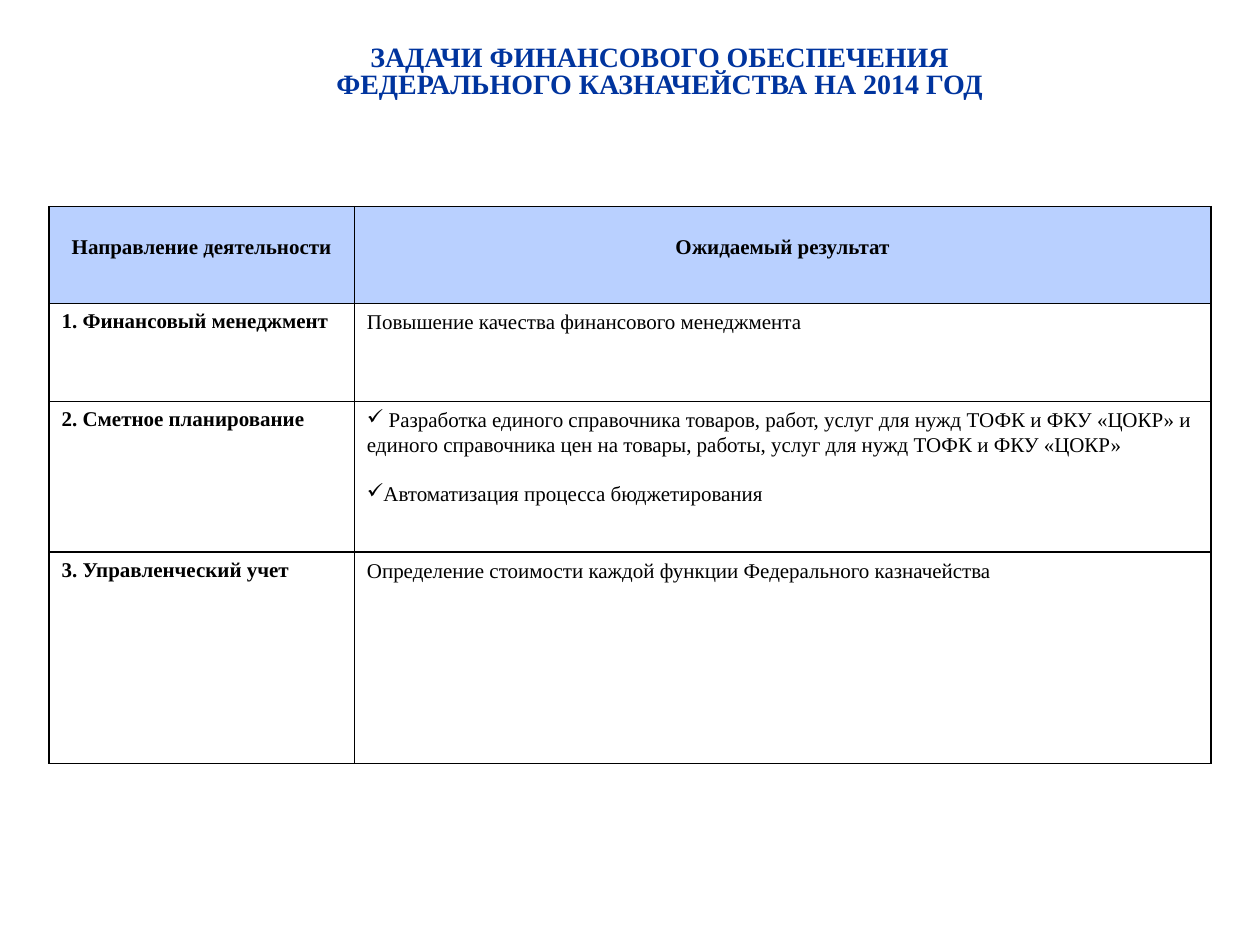
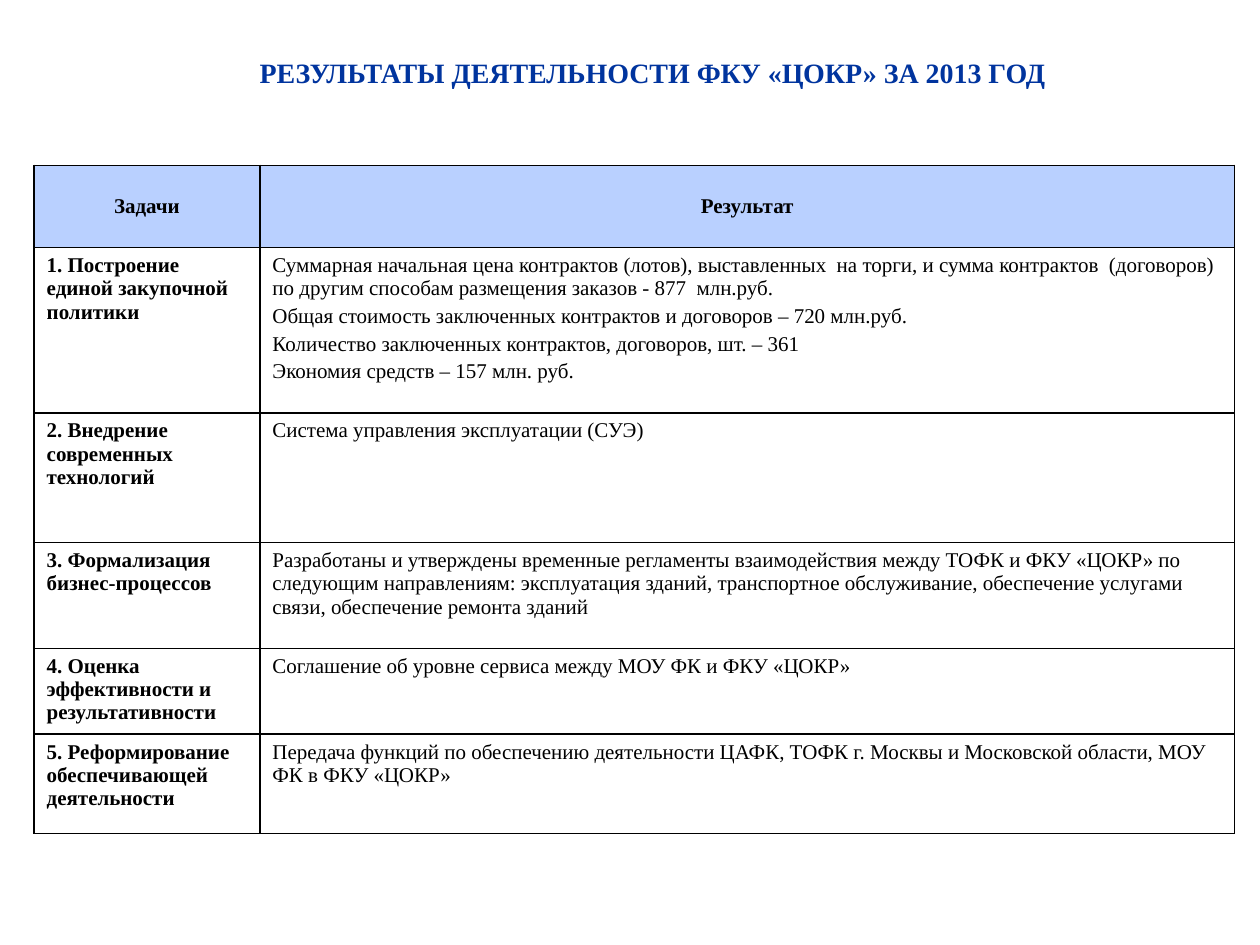
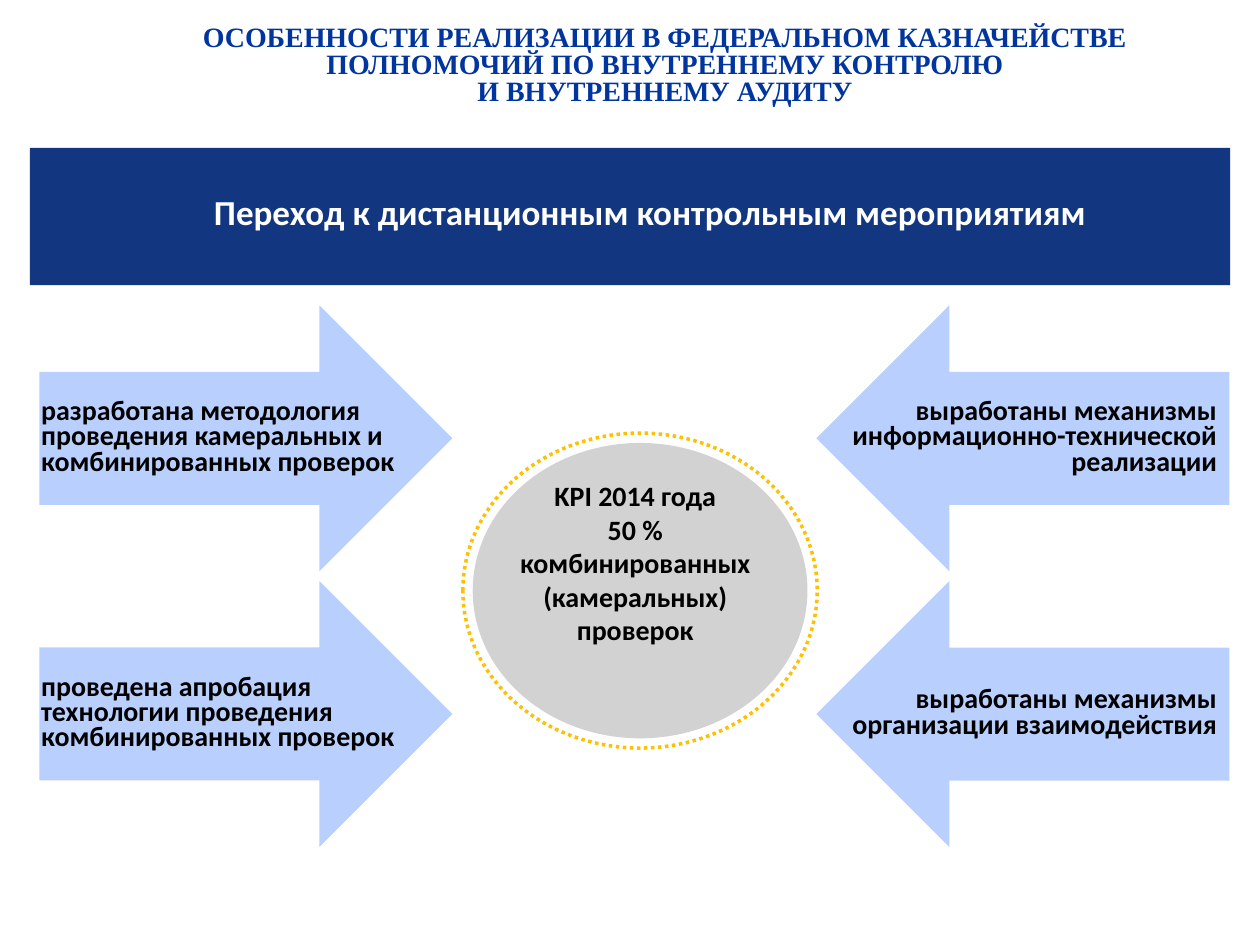
from dataclasses import dataclass

from lxml import etree
from pptx import Presentation
from pptx.dml.color import RGBColor
from pptx.enum.dml import MSO_LINE
from pptx.enum.shapes import MSO_SHAPE
from pptx.enum.text import MSO_ANCHOR, MSO_AUTO_SIZE, PP_ALIGN
from pptx.oxml.ns import qn
from pptx.util import Pt

LEFT, MID, RIGHT = PP_ALIGN.LEFT, PP_ALIGN.CENTER, PP_ALIGN.RIGHT
TOP, CENTRE = MSO_ANCHOR.TOP, MSO_ANCHOR.MIDDLE
FIXED = MSO_AUTO_SIZE.NONE
RECT, OVAL, ARROW = MSO_SHAPE.RECTANGLE, MSO_SHAPE.OVAL, MSO_SHAPE.RIGHT_ARROW
DOTS = MSO_LINE.ROUND_DOT


@dataclass(frozen=True)
class Theme:
    """Colours, fonts and type sizes of the deck."""
    title: str = "00349E"
    navy: str = "002776"
    pale: str = "B9D0FF"
    grey: str = "D2D2D2"
    gold: str = "FFC000"
    black: str = "000000"
    white: str = "FFFFFF"
    serif: str = "Times New Roman"
    sans: str = "Calibri"
    cell: int = 12
    text: int = 16
    large: int = 20


THEME = Theme()

TASKS = [
    ("Направление деятельности", "Ожидаемый результат"),
    ("1. Финансовый менеджмент", "Повышение качества финансового менеджмента"),
    ("2. Сметное планирование",
     "✓ Разработка единого справочника товаров, работ, услуг для нужд ТОФК и ФКУ «ЦОКР» "
     "и единого справочника цен на товары, работы, услуг для нужд ТОФК и ФКУ «ЦОКР»\n"
     "✓Автоматизация процесса бюджетирования"),
    ("3. Управленческий учет",
     "Определение стоимости каждой функции Федерального казначейства"),
]

RESULTS = [
    ("Задачи", "Результат"),
    ("1. Построение единой закупочной политики",
     "Суммарная начальная цена контрактов (лотов), выставленных  на торги, и сумма "
     "контрактов  (договоров) по другим способам размещения заказов - 877  млн.руб.\n"
     "Общая стоимость заключенных контрактов и договоров – 720 млн.руб.\n"
     "Количество заключенных контрактов, договоров, шт. – 361\n"
     "Экономия средств – 157 млн. руб."),
    ("2. Внедрение современных технологий", "Система управления эксплуатации (СУЭ)"),
    ("3. Формализация бизнес-процессов",
     "Разработаны и утверждены временные регламенты взаимодействия между ТОФК и ФКУ «ЦОКР» "
     "по следующим направлениям: эксплуатация зданий, транспортное обслуживание, "
     "обеспечение услугами связи, обеспечение ремонта зданий"),
    ("4. Оценка эффективности и результативности",
     "Соглашение об уровне сервиса между МОУ ФК и ФКУ «ЦОКР»"),
    ("5. Реформирование обеспечивающей деятельности",
     "Передача функций по обеспечению деятельности ЦАФК, ТОФК г. Москвы и Московской "
     "области, МОУ ФК в ФКУ «ЦОКР»"),
]


def place(box):
    """Turn a box in points into lengths."""
    return [Pt(n) for n in box]


def tick(par):
    """Give a paragraph a check mark as its bullet."""
    props = par._p.get_or_add_pPr()
    props.set("marL", "0")
    props.set("indent", "0")
    etree.SubElement(props, qn("a:buChar")).set("char", "✓")


def write(frame, text, font, size, color, bold=True, align=LEFT, line=None, gap=0):
    """Fill a text frame and format each paragraph."""
    frame.word_wrap = True
    frame.text = text.replace("✓", "")
    for n, (par, raw) in enumerate(zip(frame.paragraphs, text.split("\n"))):
        par.alignment = align
        if line:
            par.line_spacing = line
        if n and gap:
            par.space_before = Pt(gap)
        if raw.startswith("✓"):
            tick(par)
        for run in par.runs:
            run.font.name = font
            run.font.size = Pt(size)
            run.font.bold = bold
            run.font.color.rgb = RGBColor.from_string(color)


def start(deck, box, text, anchor=TOP, line=0.8):
    """Add a slide with its title."""
    slide = deck.slides.add_slide(deck.slide_layouts[5])
    title = slide.shapes.title
    title.left, title.top, title.width, title.height = place(box)
    frame = title.text_frame
    frame.auto_size = FIXED
    frame.vertical_anchor = anchor
    write(frame, text, THEME.serif, THEME.text, THEME.title, align=MID, line=line)
    return slide


def frame_cell(cell):
    """Draw thin black borders around a cell."""
    props = cell._tc.get_or_add_tcPr()
    for side in ("a:lnL", "a:lnR", "a:lnT", "a:lnB"):
        edge = etree.SubElement(props, qn(side), w=str(Pt(1)))
        fill = etree.SubElement(edge, qn("a:solidFill"))
        etree.SubElement(fill, qn("a:srgbClr"), val=THEME.black)


def grid(slide, spot, cols, highs, rows, line=None, gap=0):
    """Add a table with a pale header and bold first column."""
    box = (*spot, sum(cols), sum(highs))
    table = slide.shapes.add_table(len(rows), len(cols), *place(box)).table
    table.first_row = table.horz_banding = False
    for col, wide in zip(table.columns, cols):
        col.width = Pt(wide)
    for r, (row, high) in enumerate(zip(rows, highs)):
        table.rows[r].height = Pt(high)
        for c, text in enumerate(row):
            cell = table.cell(r, c)
            head = r == 0
            frame_cell(cell)
            cell.fill.solid()
            cell.fill.fore_color.rgb = RGBColor.from_string(THEME.pale if head else THEME.white)
            cell.margin_top = Pt(17 if head else 3.6)
            write(cell.text_frame, text, THEME.serif, THEME.cell, THEME.black,
                  bold=head or c == 0, align=MID if head else LEFT,
                  line=line if c and not head else None, gap=gap)


def shape(slide, kind, box, color=None):
    """Add a flat shape without outline."""
    item = slide.shapes.add_shape(kind, *place(box))
    item.shadow.inherit = False
    item.line.fill.background()
    if color:
        item.fill.solid()
        item.fill.fore_color.rgb = RGBColor.from_string(color)
    else:
        item.fill.background()
    return item


def label(slide, box, text, size=THEME.text, color=THEME.black, align=MID, line=None, anchor=TOP):
    """Add a bold sans text box."""
    frame = slide.shapes.add_textbox(*place(box)).text_frame
    frame.vertical_anchor = anchor
    write(frame, text, THEME.sans, size, color, align=align, line=line)


def banner(slide, box, text):
    """Add the slightly clear navy band and its text."""
    x, y, wide, high = box
    band = shape(slide, RECT, box, THEME.navy)
    tint = band._element.spPr.find(qn("a:solidFill"))[0]
    etree.SubElement(tint, qn("a:alpha"), val="93000")
    label(slide, (x + 6, y + 25.5, wide + 11, high - 51), text, THEME.large, THEME.white, line=0.8)


def pointer(slide, box, text, flip):
    """Add an arrow aimed inward with a label on its shaft."""
    x, y, wide, high = box
    arrow = shape(slide, ARROW, box, THEME.pale)
    arrow.rotation = 180 if flip else 0
    deep = 51
    left = x + (wide - 224.5 if flip else -6)
    label(slide, (left, y + (high - deep) / 2, 224.5, deep), text,
          align=RIGHT if flip else LEFT, line=0.75, anchor=CENTRE)


def target(slide, box, text):
    """Add the grey oval with its dotted ring and text."""
    x, y, wide, high = box
    ring = shape(slide, OVAL, box)
    ring.line.color.rgb = RGBColor.from_string(THEME.gold)
    ring.line.width = Pt(2)
    ring.line.dash_style = DOTS
    inset = 5.6
    shape(slide, OVAL, (x + inset, y + inset, wide - 2 * inset, high - 2 * inset), THEME.grey)
    label(slide, (x + 11.5, y + 22.5, 174, 117), text)


def tasks(deck):
    """Build the slide of tasks for 2014."""
    slide = start(deck, (96, 22.5, 562, 39),
                  "ЗАДАЧИ ФИНАНСОВОГО ОБЕСПЕЧЕНИЯ\nФЕДЕРАЛЬНОГО КАЗНАЧЕЙСТВА НА 2014 ГОД")
    grid(slide, (28, 118), (174.5, 489.5), (55.5, 56, 86, 121), TASKS, line=Pt(14), gap=14)


def results(deck):
    """Build the slide of results for 2013."""
    slide = start(deck, (88, 28, 570, 27), "РЕЗУЛЬТАТЫ ДЕЯТЕЛЬНОСТИ ФКУ «ЦОКР» ЗА 2013 ГОД",
                  anchor=CENTRE, line=1.0)
    grid(slide, (19.5, 94.5), (129, 557), (47, 94.5, 74, 60.5, 49, 57), RESULTS, gap=2.4)


def control(deck):
    """Build the slide on remote control."""
    slide = start(deck, (96, 11.5, 568, 53),
                  "ОСОБЕННОСТИ РЕАЛИЗАЦИИ В ФЕДЕРАЛЬНОМ КАЗНАЧЕЙСТВЕ ПОЛНОМОЧИЙ ПО ВНУТРЕННЕМУ "
                  "КОНТРОЛЮ\nИ ВНУТРЕННЕМУ АУДИТУ")
    banner(slide, (17, 84.5, 686, 78.5), "Переход к дистанционным контрольным мероприятиям")
    pairs = [
        ("разработана методология\nпроведения камеральных и\nкомбинированных проверок",
         "выработаны механизмы информационно-технической реализации"),
        ("проведена апробация технологии проведения комбинированных проверок",
         "выработаны механизмы организации взаимодействия"),
    ]
    for row, pair in enumerate(pairs):
        for col, text in enumerate(pair):
            box = (22.5 + 444 * col, 174.5 + 157.5 * row, 236, 152)
            pointer(slide, box, text, flip=col == 1)
    target(slide, (264.5, 247.5, 202.5, 180),
           "KPI 2014 года\n50 % комбинированных (камеральных) проверок")


def main():
    """Build and save the deck."""
    deck = Presentation()
    deck.slide_width, deck.slide_height = Pt(720), Pt(540)
    for build in (tasks, results, control):
        build(deck)
    deck.save("out.pptx")


if __name__ == "__main__":
    main()
